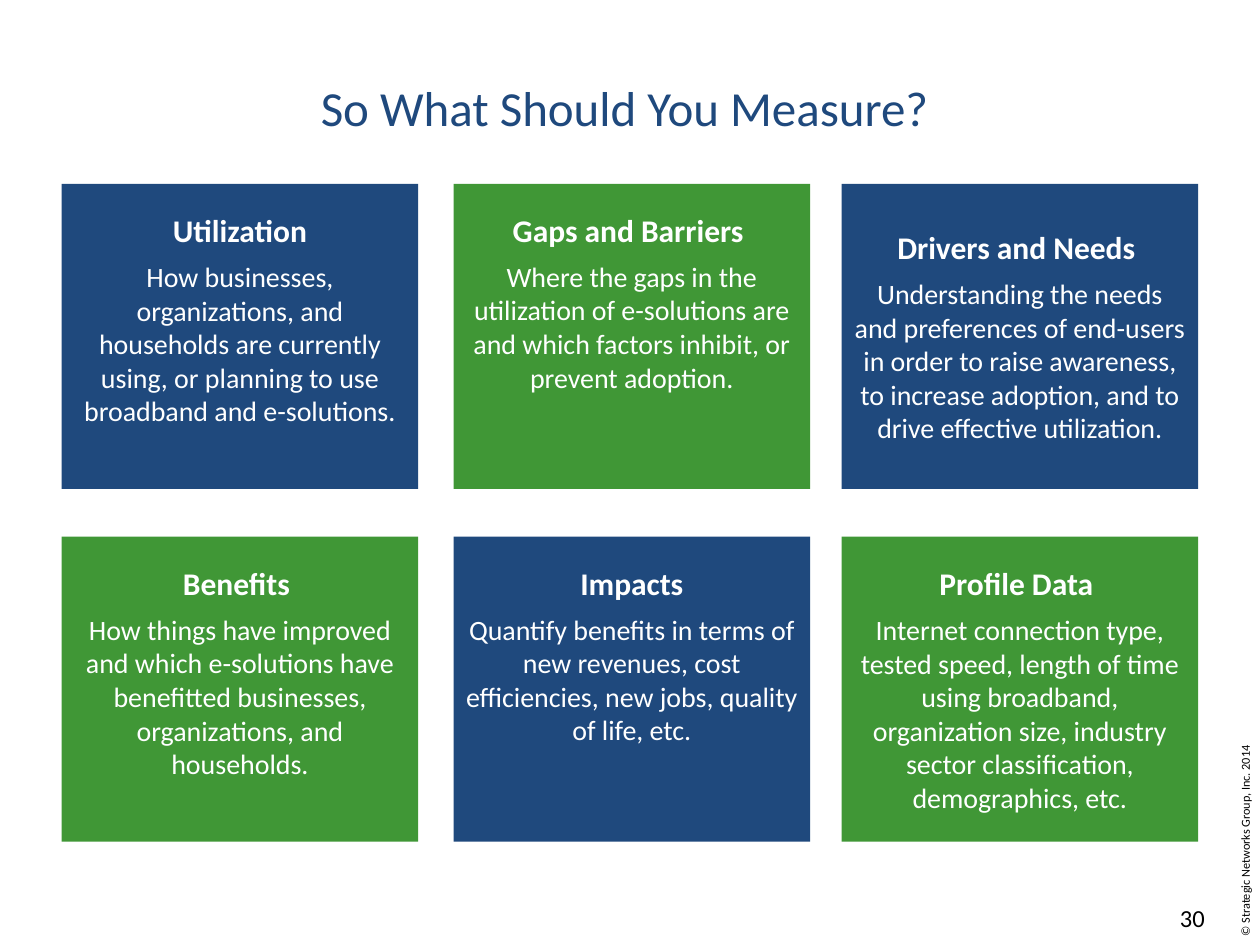
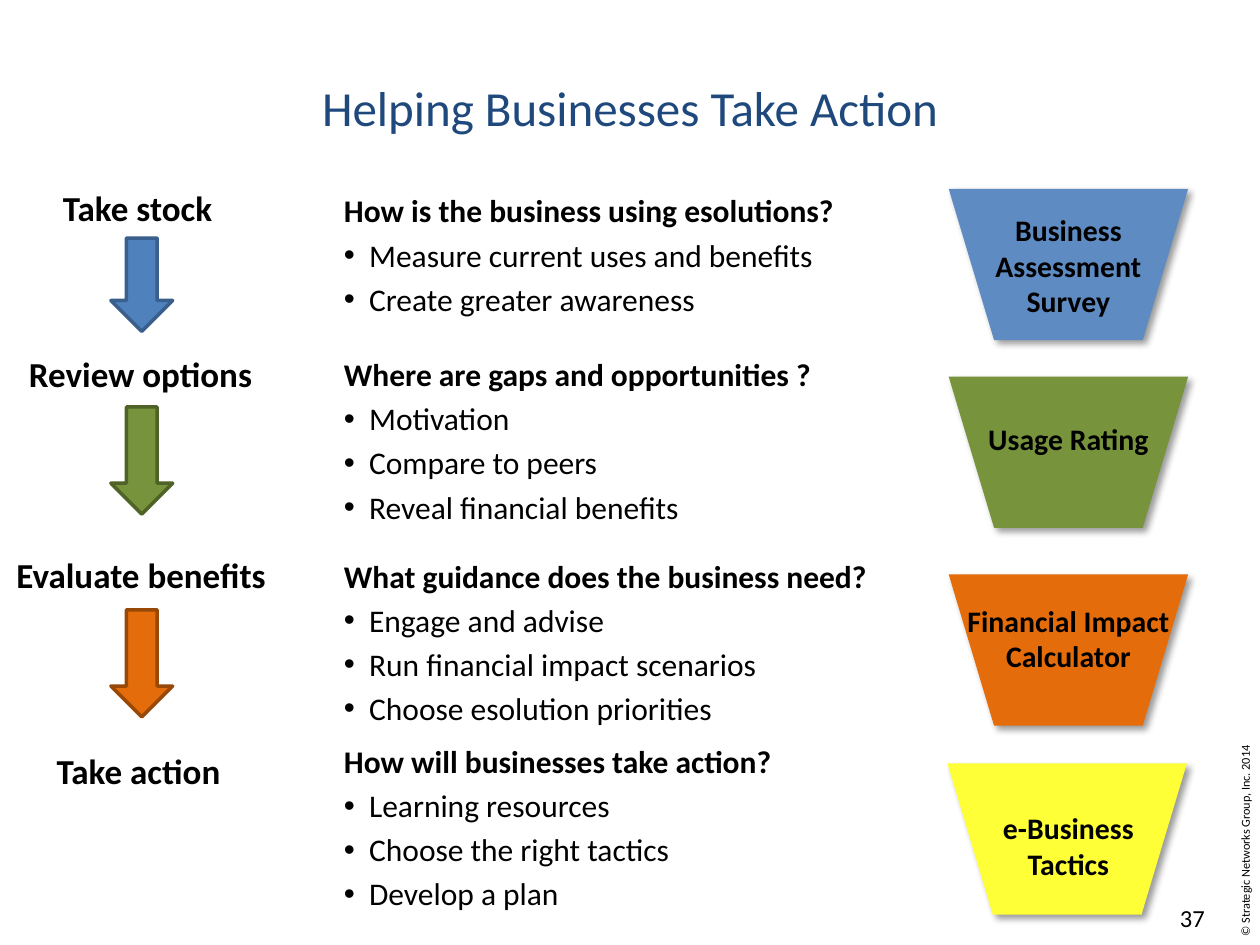
import pptx
import pptx.dml.color
import pptx.enum.shapes
import pptx.enum.text
import pptx.oxml
import pptx.oxml.ns
import pptx.util

Inches = pptx.util.Inches
Pt = pptx.util.Pt
RGBColor = pptx.dml.color.RGBColor
Shape = pptx.enum.shapes.MSO_SHAPE
Align = pptx.enum.text.PP_ALIGN
Anchor = pptx.enum.text.MSO_ANCHOR

FONT = "Calibri"
NAVY = RGBColor(0x1F, 0x49, 0x7D)
LEAF = RGBColor(0x40, 0x97, 0x36)
WHITE = RGBColor(0xFF, 0xFF, 0xFF)
BLACK = RGBColor(0x00, 0x00, 0x00)
SKY = RGBColor(0x5E, 0x8B, 0xC2)
BLUE = RGBColor(0x4F, 0x81, 0xBD)
BLUE_EDGE = RGBColor(0x3A, 0x5F, 0x8C)
OLIVE = RGBColor(0x77, 0x93, 0x3C)
OLIVE_EDGE = RGBColor(0x4F, 0x62, 0x28)
ORANGE = RGBColor(0xE4, 0x6C, 0x0A)
ORANGE_EDGE = RGBColor(0x98, 0x48, 0x07)
YELLOW = RGBColor(0xFF, 0xFF, 0x37)

PLAIN_INSETS = (0.1, 0.05, 0.1, 0.05)
WIDE_INSETS = (0.12, 0.06, 0.12, 0.06)
BODY_LINE = 0.27

CARD_LEFTS = (0.49, 3.6, 6.68)
CARD_TOPS = (1.46, 4.26)
CARDS = [
    ("Utilization", "How businesses, organizations, and households are currently using, "
     "or planning to use broadband and e-solutions.", 1),
    ("Gaps and Barriers ", "Where the gaps in the utilization of e-solutions are and which "
     "factors inhibit, or prevent adoption.", 2),
    ("Drivers and Needs ", "Understanding the needs and preferences of end-users in order to "
     "raise awareness, to increase adoption, and to drive effective utilization.", 0),
    ("Benefits ", "How things have improved and which e-solutions have benefitted businesses, "
     "organizations, and households.", 1),
    ("Impacts", "Quantify benefits in terms of new revenues, cost efficiencies, new jobs, "
     "quality of life, etc.", 2),
    ("Profile Data ", "Internet connection type, tested speed, length of time using broadband, "
     "organization size, industry sector classification, demographics, etc.", 0),
]

STEPS = [
    ("Take stock", 0.38, 1.42, 1.47),
    ("Review options", 0.11, 2.74, 2.04),
    ("Evaluate benefits", 0.01, 4.33, 2.26),
    ("Take action", 0.33, 5.89, 1.58),
]
ARROWS = [
    (1.89, 0.74, BLUE, BLUE_EDGE),
    (3.23, 0.85, OLIVE, OLIVE_EDGE),
    (4.84, 0.85, ORANGE, ORANGE_EDGE),
]
QUESTIONS = [
    (1.46, "How is the business using esolutions?",
     ["Measure current uses and benefits", "Create greater awareness"]),
    (2.76, "Where are gaps and opportunities ?",
     ["Motivation", "Compare to peers", "Reveal financial benefits"]),
    (4.36, "What guidance does the business need?",
     ["Engage and advise", "Run financial impact scenarios", "Choose esolution priorities"]),
    (5.83, "How will businesses take action?",
     ["Learning resources", "Choose the right tactics", "Develop a plan"]),
]
TOOLS = [
    ("Business Assessment Survey", 7.53, 1.5, 1.62, 0.98, SKY),
    ("Usage Rating", 7.53, 2.99, 3.28, 0.4, OLIVE),
    ("Financial Impact Calculator", 7.53, 4.56, 4.72, 0.69, ORANGE),
    ("e-Business Tactics", 7.52, 6.06, 6.37, 0.69, YELLOW),
]


def set_frame(frame, insets=PLAIN_INSETS, anchor=Anchor.TOP, wrap=True):
    frame.margin_left, frame.margin_top, frame.margin_right, frame.margin_bottom = map(Inches, insets)
    frame.vertical_anchor = anchor
    frame.word_wrap = wrap


def write(paragraph, text, size, color=BLACK, bold=False, align=Align.LEFT, after=0):
    paragraph.text = text
    paragraph.alignment = align
    paragraph.space_after = Pt(after)
    paragraph.font.name = FONT
    paragraph.font.size = Pt(size)
    paragraph.font.bold = bold
    paragraph.font.color.rgb = color


def add_text(shapes, box, text, size, insets=PLAIN_INSETS, anchor=Anchor.TOP, wrap=True, **style):
    label = shapes.add_textbox(*map(Inches, box))
    set_frame(label.text_frame, insets, anchor, wrap)
    write(label.text_frame.paragraphs[0], text, size, **style)
    return label


def add_filled(shapes, kind, box, fill, edge=None):
    figure = shapes.add_shape(kind, *map(Inches, box))
    figure.shadow.inherit = False
    figure.fill.solid()
    figure.fill.fore_color.rgb = fill
    if edge is None:
        figure.line.fill.background()
    else:
        figure.line.color.rgb = edge
        figure.line.width = Pt(2)
    return figure


def add_base_slide(deck, title, number):
    slide = deck.slides.add_slide(deck.slide_layouts[6])
    rights = add_text(slide.shapes, (8.99, 6.47, 1.78, 0.26), "© Strategic Networks Group, Inc. 2014", 7,
                      insets=(0.06, 0.05, 0.1, 0.05), anchor=Anchor.MIDDLE, wrap=False)
    rights.rotation = 270
    add_text(slide.shapes, (7.33, 7.12, 2.33, 0.4), number, 14, align=Align.RIGHT)
    add_text(slide.shapes, (0.5, 0.47, 9, 0.75), title, 28, anchor=Anchor.MIDDLE,
             color=NAVY, align=Align.CENTER)
    return slide


def add_card(slide, left, top, fill, heading, body, spare_lines):
    card = add_filled(slide.shapes, Shape.RECTANGLE, (left, top, 2.83, 2.42), fill)
    frame = card.text_frame
    set_frame(frame, (0.1, 0.05, 0.1, 0.05 + spare_lines * BODY_LINE), Anchor.MIDDLE)
    write(frame.paragraphs[0], heading, 18, WHITE, True, Align.CENTER, 6)
    write(frame.add_paragraph(), body, 16, WHITE, align=Align.CENTER)


def add_bullet(paragraph):
    properties = paragraph._p.get_or_add_pPr()
    properties.set("marL", str(Inches(0.2)))
    properties.set("indent", str(-Inches(0.2)))
    for tag, attribute, value in (("a:buFont", "typeface", "Arial"), ("a:buChar", "char", "•")):
        mark = pptx.oxml.parse_xml(f'<{tag} {pptx.oxml.ns.nsdecls("a")} {attribute}="{value}"/>')
        properties.append(mark)


def add_question(slide, top, question, points):
    height = 0.43 + 0.35 * len(points)
    block = add_text(slide.shapes, (2.61, top, 4.8, height), question, 18,
                     insets=WIDE_INSETS, bold=True, after=3.6)
    for point in points:
        paragraph = block.text_frame.add_paragraph()
        add_bullet(paragraph)
        write(paragraph, point, 18, after=3.6)


def add_drop_shadow(figure):
    effects = figure._element.spPr.find(pptx.oxml.ns.qn("a:effectLst"))
    effects.append(pptx.oxml.parse_xml(
        f'<a:outerShdw {pptx.oxml.ns.nsdecls("a")} blurRad="{Pt(4)}" dist="{Pt(3)}" dir="2700000" '
        'algn="tl" rotWithShape="0"><a:srgbClr val="000000"><a:alpha val="40000"/></a:srgbClr>'
        '</a:outerShdw>'))


def add_tool(slide, name, left, top, name_top, name_height, fill):
    tool = slide.shapes.add_group_shape()
    funnel = add_filled(tool.shapes, Shape.TRAPEZOID, (left, top, 1.9, 1.2), fill)
    funnel.adjustments[0] = 0.3
    funnel._element.spPr.get_or_add_xfrm().set("flipV", "1")
    add_drop_shadow(funnel)
    add_text(tool.shapes, (7.53, name_top, 1.9, name_height), name, 17,
             insets=WIDE_INSETS, bold=True, align=Align.CENTER)


def build_measures(deck):
    slide = add_base_slide(deck, "So What Should You Measure? ", "30")
    for index, card in enumerate(CARDS):
        row, column = divmod(index, len(CARD_LEFTS))
        fill = LEAF if index % 2 else NAVY
        add_card(slide, CARD_LEFTS[column], CARD_TOPS[row], fill, *card)


def build_actions(deck):
    slide = add_base_slide(deck, "Helping Businesses Take Action", "37")
    for tool in TOOLS:
        add_tool(slide, *tool)
    for question in QUESTIONS:
        add_question(slide, *question)
    for step, left, top, width in STEPS:
        add_text(slide.shapes, (left, top, width, 0.46), step, 20,
                 insets=WIDE_INSETS, wrap=False, bold=True)
    for top, height, fill, edge in ARROWS:
        add_filled(slide.shapes, Shape.DOWN_ARROW, (0.88, top, 0.49, height), fill, edge)


def main():
    deck = pptx.Presentation()
    deck.slide_width = Inches(10)
    deck.slide_height = Inches(7.5)
    build_measures(deck)
    build_actions(deck)
    deck.save("out.pptx")


if __name__ == "__main__":
    main()
